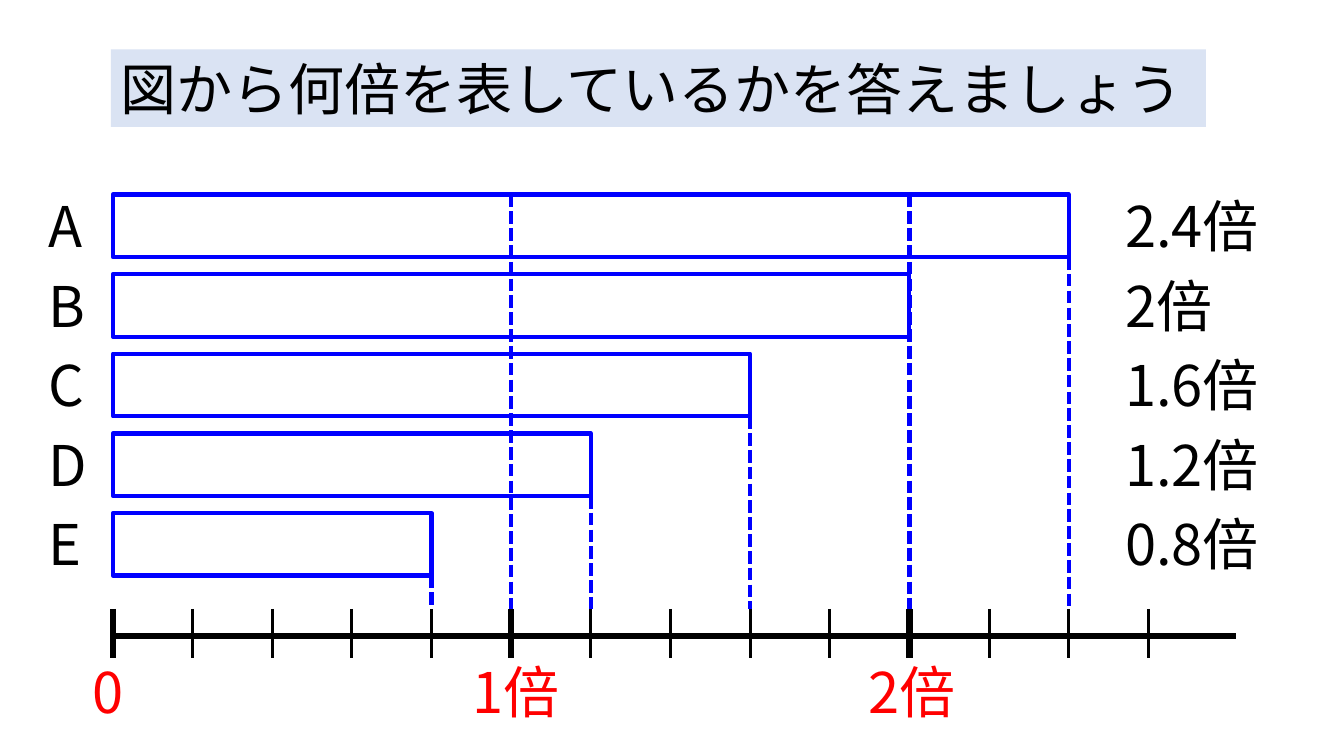
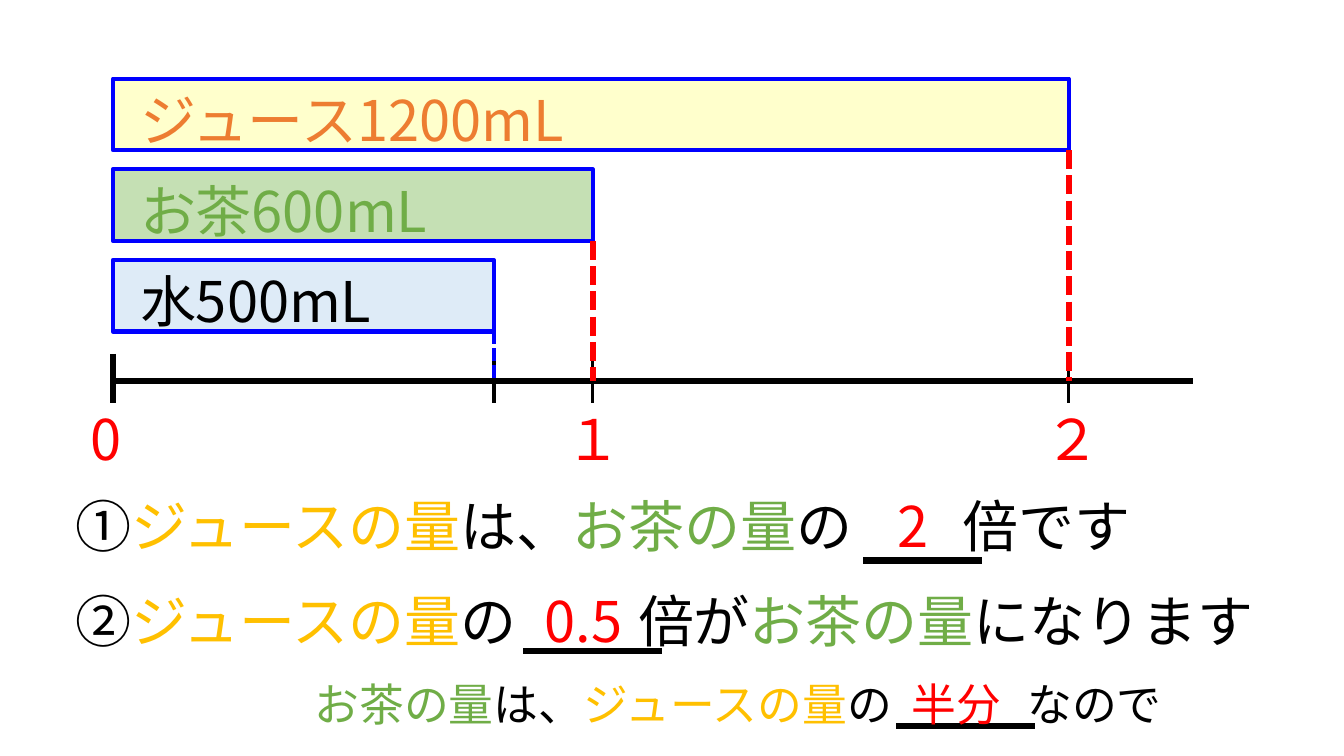
from dataclasses import dataclass

from lxml import etree
from pptx import Presentation
from pptx.dml.color import RGBColor
from pptx.enum.dml import MSO_LINE
from pptx.enum.shapes import MSO_CONNECTOR, MSO_SHAPE
from pptx.enum.text import MSO_AUTO_SIZE, PP_ALIGN
from pptx.oxml.ns import qn
from pptx.util import Inches, Pt

RECT = MSO_SHAPE.RECTANGLE
STRAIGHT = MSO_CONNECTOR.STRAIGHT
SYS_DASH = MSO_LINE.SQUARE_DOT
GROW = MSO_AUTO_SIZE.SHAPE_TO_FIT_TEXT
LEFT, CENTER = PP_ALIGN.LEFT, PP_ALIGN.CENTER


@dataclass(frozen=True)
class Theme:
    """Colours, font, type sizes and line weights shared by the slides."""
    font: str = "Noto Sans CJK JP"
    size: int = 40
    small: int = 32
    ink: str = "000000"
    white: str = "FFFFFF"
    blue: str = "0000FF"
    red: str = "FF0000"
    title_fill: str = "DAE3F3"
    juice: str = "FFC000"
    juice_label: str = "ED7D31"
    juice_fill: str = "FFFFCC"
    tea: str = "70AD47"
    tea_fill: str = "C5E0B4"
    water_fill: str = "DEEBF7"
    thick: float = 4.5
    medium: float = 3
    thin: float = 2.25


T = Theme()
ROW = 0.77
ORIGIN = 1.12
SPAN = 9.48


def rgb(color):
    """Turn a hex string into a colour."""
    return RGBColor.from_string(color)


def add_text(s, box, runs, size=T.size, color=T.ink, fill=None, wrap=True, align=LEFT, tab=None):
    """Add a text box from a string or a list of (text, colour) runs."""
    sp = s.shapes.add_textbox(*map(Inches, box))
    if fill:
        sp.fill.solid()
        sp.fill.fore_color.rgb = rgb(fill)
    tf = sp.text_frame
    tf.word_wrap = wrap
    tf.auto_size = GROW
    p = tf.paragraphs[0]
    p.alignment = align
    if tab:
        tabs = etree.SubElement(p._p.get_or_add_pPr(), qn("a:tabLst"))
        etree.SubElement(tabs, qn("a:tab"), pos=str(Inches(tab)), algn="l")
    for words, tint in [(runs, color)] if isinstance(runs, str) else runs:
        r = p.add_run()
        r.text = words
        r.font.size = Pt(size)
        r.font.color.rgb = rgb(tint)
        r.font.name = T.font
        etree.SubElement(r._r.get_or_add_rPr(), qn("a:ea"), typeface=T.font)


def add_bar(s, box, fill):
    """Add a blue-outlined bar."""
    sp = s.shapes.add_shape(RECT, *map(Inches, box))
    sp.shadow.inherit = False
    sp.fill.solid()
    sp.fill.fore_color.rgb = rgb(fill)
    sp.line.color.rgb = rgb(T.blue)
    sp.line.width = Pt(T.medium)


def add_line(s, start, end, color=T.ink, weight=T.thick, dash=None):
    """Add a straight line between two points."""
    c = s.shapes.add_connector(STRAIGHT, *map(Inches, (*start, *end)))
    c.line.color.rgb = rgb(color)
    c.line.width = Pt(weight)
    if dash:
        c.line.dash_style = dash
    etree.SubElement(c._element.spPr, qn("a:effectLst"))


def add_drop(s, x, top, bottom, color=T.blue, weight=T.medium):
    """Add a vertical dashed guide."""
    add_line(s, (x, top), (x, bottom), color, weight, SYS_DASH)


def add_number_line(s, left, y, width, ticks, marks, mark_drop):
    """Add an axis with (offset, weight) ticks and (offset, width, text) marks."""
    add_line(s, (left, y), (left + width, y))
    for dx, weight in ticks:
        add_line(s, (left + dx, y - 0.27), (left + dx, y + 0.22), weight=weight)
    for dx, mark_width, words in marks:
        add_text(s, (left + dx, y + mark_drop, mark_width, ROW), words, color=T.red)


def add_ratio_chart(s, left, top):
    """Add the lettered bars, their ratios, guides and number line."""
    unit, step, height = 0.79, 0.79, 0.62
    axis = top + 4.38
    tick_top = axis - 0.27
    rows = [("A", 12, "2.4倍"), ("B", 10, "2倍"), ("C", 8, "1.6倍"),
            ("D", 6, "1.2倍"), ("E", 4, "0.8倍")]
    for i, (letter, units, ratio) in enumerate(rows):
        y = top + i * step
        add_bar(s, (left, y, units * unit, height), T.white)
        add_text(s, (left - 0.74, y - 0.08, 0.86, ROW), letter)
        add_text(s, (left + 9.94, y - 0.08, 1.76, ROW), ratio)
    ticks = [(i * unit, T.medium * 1.5 if i % 5 == 0 else T.thin) for i in range(14)]
    marks = [(-0.3, 0.47, "0"), (5 * unit - 0.48, 1.23, "1倍"), (10 * unit - 0.5, 1.23, "2倍")]
    add_number_line(s, left, axis, 11.14, ticks, marks, 0.16)
    for units in (5, 10):
        add_drop(s, left + units * unit, top, tick_top)
    for i, (_, units, _) in enumerate(rows):
        if units % 5:
            add_drop(s, left + units * unit, top + i * step + height, tick_top)


def add_drink_chart(s, left, top):
    """Add the drink bars, their guides and number line."""
    step, height = 0.9, 0.71
    axis = top + 3
    rows = [("ジュース1200mL", SPAN, T.juice_fill, T.juice_label, T.red, T.thick),
            ("お茶600mL", 4.76, T.tea_fill, T.tea, T.red, T.thick),
            ("水500mL", 3.78, T.water_fill, T.ink, T.blue, T.medium)]
    for i, (label, width, fill, color, _, _) in enumerate(rows):
        y = top + i * step
        add_bar(s, (left, y, width, height), fill)
        add_text(s, (left + 0.17, y + 0.02, 5.09, ROW), label, color=color)
    ticks = [(0, T.thick), (3.78, T.medium), (4.76, T.thin), (SPAN, T.thin)]
    marks = [(-0.32, 0.47, "0"), (4.39, 0.67, "１"), (9.14, 0.67, "２")]
    add_number_line(s, left, axis, 10.71, ticks, marks, 0.18)
    for i, (_, width, _, _, color, weight) in enumerate(rows):
        add_drop(s, left + width, top + i * step + height, axis, color, weight)


def add_sentence(s, box, runs, tab, blank, answer, size=T.size):
    """Add a sentence whose (offset, width, drop) blank holds a red answer."""
    left, top, _, height = box
    dx, width, drop = blank
    x = left + dx
    add_text(s, box, runs, size=size, tab=tab)
    add_line(s, (x, top + drop), (x + width, top + drop))
    add_text(s, (x - 0.09, top, width, height), answer, size=size, color=T.red, align=CENTER)


def build_ratio_slide(s):
    """Build the slide that asks for each ratio."""
    add_text(s, (1.1, 0.49, 10.86, ROW), "図から何倍を表しているかを答えましょう",
             fill=T.title_fill, wrap=False)
    add_ratio_chart(s, ORIGIN, 1.93)


def build_drink_slide(s):
    """Build the slide that compares the drinks."""
    juice, tea = ("ジュースの量", T.juice), ("お茶の量", T.tea)
    add_drink_chart(s, ORIGIN, 0.78)
    add_sentence(s, (0.65, 4.83, 10.9, ROW),
                 [("①", T.ink), juice, ("は、", T.ink), tea, ("の\t倍です", T.ink)],
                 8.8, (7.91, 1.18, 0.73), "2")
    add_sentence(s, (0.65, 5.77, 12.16, ROW),
                 [("②", T.ink), juice, ("の\t倍が", T.ink), tea, ("になります", T.ink)],
                 5.58, (4.54, 1.38, 0.69), "0.5")
    add_sentence(s, (3.02, 6.66, 8.81, 0.64),
                 [tea, ("は、", T.ink), juice, ("の\tなので", T.ink)],
                 7.07, (5.87, 1.38, 0.54), "半分", size=T.small)


def main():
    """Build and save the presentation."""
    prs = Presentation()
    prs.slide_width, prs.slide_height = Inches(13.33), Inches(7.5)
    for build in (build_ratio_slide, build_drink_slide):
        build(prs.slides.add_slide(prs.slide_layouts[6]))
    prs.save("out.pptx")


if __name__ == "__main__":
    main()
